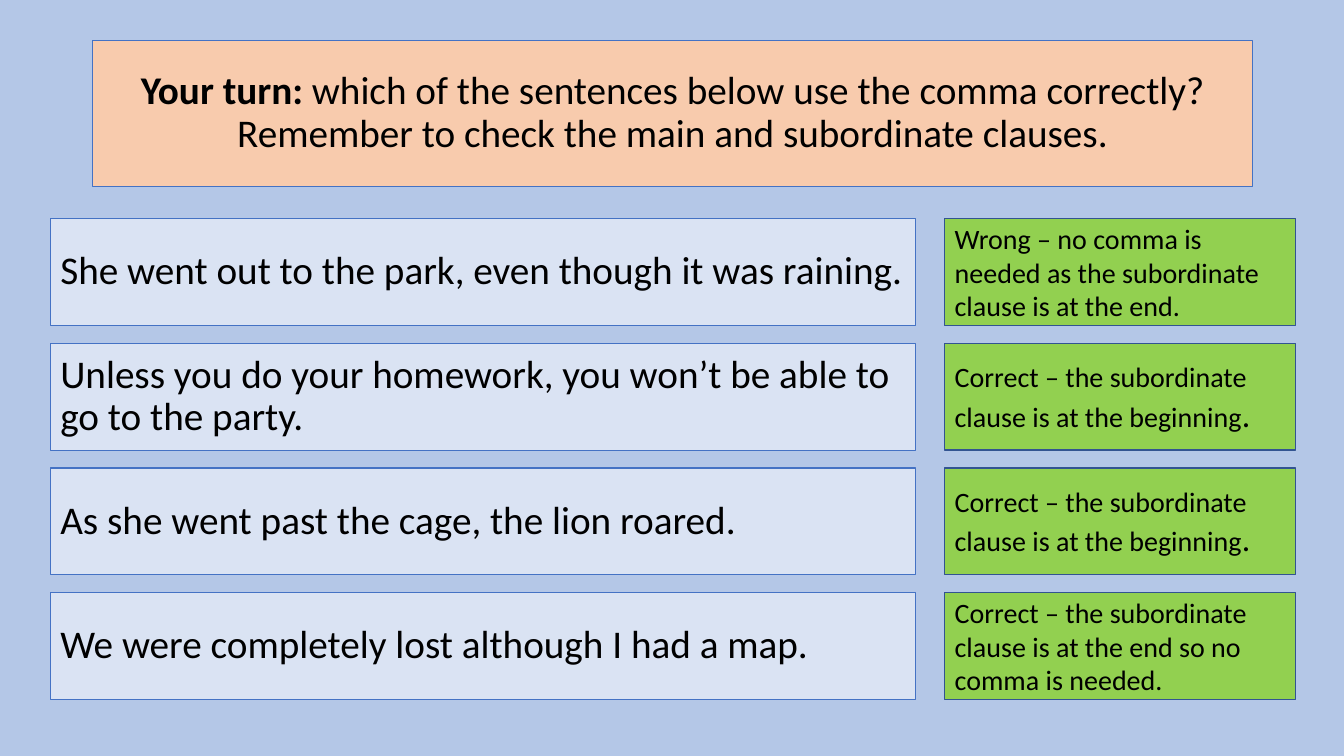
from pptx import Presentation
from pptx.dml.color import RGBColor
from pptx.enum.shapes import MSO_SHAPE as Shape
from pptx.enum.text import MSO_ANCHOR as Anchor, PP_ALIGN as Align
from pptx.util import Inches, Pt

FIRST_ROW, LAST_ROW, ROW_HEIGHT = 2.17, 5.88, 1.06
SENTENCE_LEFT, SENTENCE_WIDTH = 0.5, 8.58
ANSWER_LEFT, ANSWER_WIDTH = 9.37, 3.48

AT_BEGINNING = [("Correct – the subordinate clause is at the beginning", 20, False),
                (".", 24, False)]
EXERCISES = [
    ("She went out to the park, even though it was raining.",
     [("Wrong – no comma is needed as the subordinate clause is at the end.", 20, False)]),
    ("Unless you do your homework, you won’t be able to go to the party.", AT_BEGINNING),
    ("As she went past the cage, the lion roared.", AT_BEGINNING),
    ("We were completely lost although I had a map.",
     [("Correct – the subordinate clause is at the end so no comma is needed.", 20, False)]),
]


def color(hex_code):
    """Turn a hex string into a colour."""
    return RGBColor.from_string(hex_code)


def add_box(slide, place, fill, border, runs, align=Align.LEFT, spacing=1.0):
    """Draw a bordered box holding one paragraph of (text, size, bold) runs."""
    border_color, border_width = border
    box = slide.shapes.add_shape(Shape.RECTANGLE, *map(Inches, place))
    box.shadow.inherit = False
    box.fill.solid()
    box.fill.fore_color.rgb = color(fill)
    box.line.color.rgb = color(border_color)
    box.line.width = Pt(border_width)
    frame = box.text_frame
    frame.word_wrap = True
    frame.vertical_anchor = Anchor.MIDDLE
    paragraph = frame.paragraphs[0]
    paragraph.alignment = align
    paragraph.line_spacing = spacing
    for words, size, bold in runs:
        run = paragraph.add_run()
        run.text = words
        run.font.name = "Calibri"
        run.font.size = Pt(size)
        run.font.bold = bold
        run.font.color.rgb = color("000000")


def add_question(slide):
    """Add the task heading."""
    add_box(slide, (0.92, 0.4, 11.5, 1.45), "F8CBAD", ("4472C4", 0.75),
            [("Your turn: ", 28, True),
             ("which of the sentences below use the comma correctly? "
              "Remember to check the main and subordinate clauses.", 28, False)],
            Align.CENTER, 0.9)


def add_exercise(slide, top, sentence, answer):
    """Add a sentence with its answer beside it."""
    add_box(slide, (SENTENCE_LEFT, top, SENTENCE_WIDTH, ROW_HEIGHT), "DAE3F3",
            ("4472C4", 0.75), [(sentence, 28, False)], spacing=0.9)
    add_box(slide, (ANSWER_LEFT, top, ANSWER_WIDTH, ROW_HEIGHT), "92D050",
            ("325491", 1), answer)


def main():
    """Build and save the slide."""
    deck = Presentation()
    deck.slide_width, deck.slide_height = Inches(13.33), Inches(7.5)
    slide = deck.slides.add_slide(deck.slide_layouts[6])
    slide.background.fill.solid()
    slide.background.fill.fore_color.rgb = color("B4C7E7")
    add_question(slide)
    pitch = (LAST_ROW - FIRST_ROW) / (len(EXERCISES) - 1)
    for row, (sentence, answer) in enumerate(EXERCISES):
        add_exercise(slide, FIRST_ROW + row * pitch, sentence, answer)
    deck.save("out.pptx")


if __name__ == "__main__":
    main()
